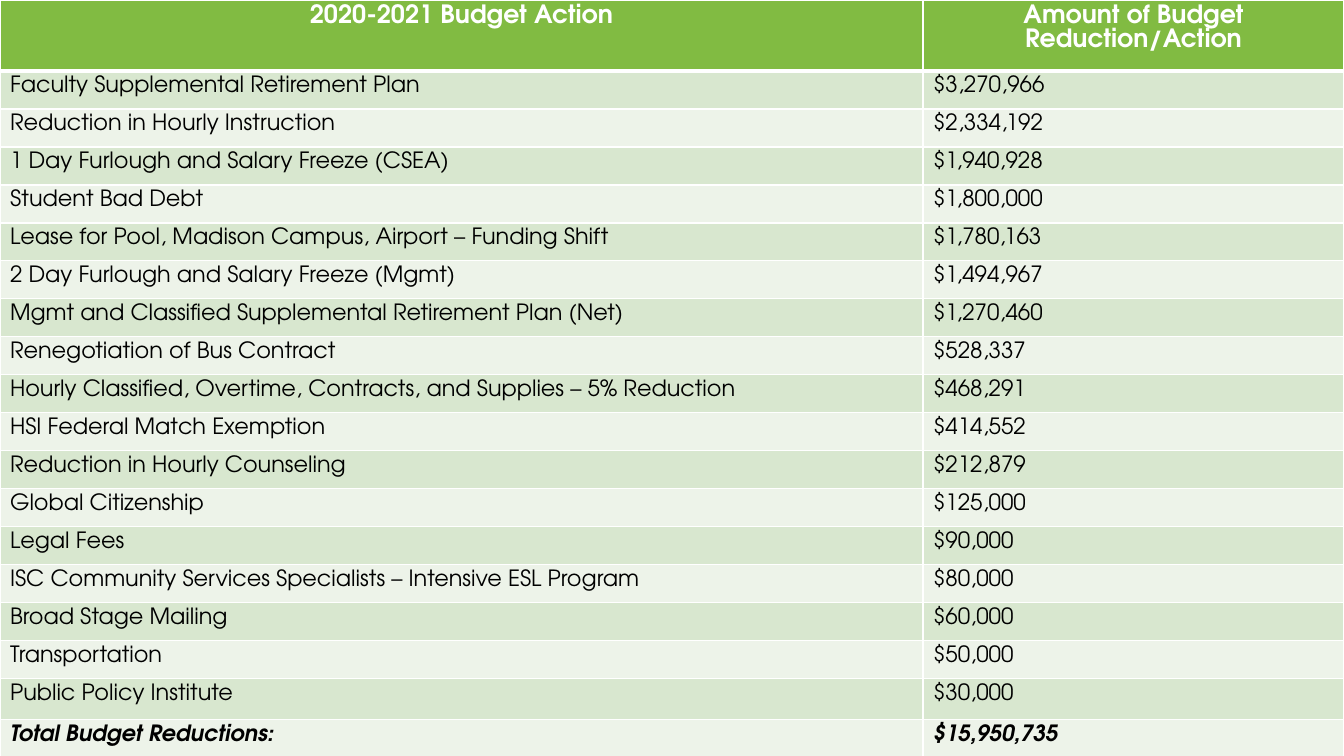
"""Build the 2020-2021 budget action table slide."""
from lxml.etree import SubElement
from pptx import Presentation
from pptx.dml.color import RGBColor
from pptx.enum.text import PP_ALIGN
from pptx.oxml.ns import qn
from pptx.util import Pt

HEADER = ("2020-2021 Budget Action", "Amount of Budget Reduction/Action")
ACTIONS = [
    ("Faculty Supplemental Retirement Plan", "$3,270,966"),
    ("Reduction in Hourly Instruction", "$2,334,192"),
    ("1 Day Furlough and Salary Freeze (CSEA)", "$1,940,928"),
    ("Student Bad Debt", "$1,800,000"),
    ("Lease for Pool, Madison Campus, Airport – Funding Shift", "$1,780,163"),
    ("2 Day Furlough and Salary Freeze (Mgmt)", "$1,494,967"),
    ("Mgmt and Classified Supplemental Retirement Plan (Net)", "$1,270,460"),
    ("Renegotiation of Bus Contract", "$528,337"),
    ("Hourly Classified, Overtime, Contracts, and Supplies – 5% Reduction", "$468,291"),
    ("HSI Federal Match Exemption", "$414,552"),
    ("Reduction in Hourly Counseling", "$212,879"),
    ("Global Citizenship", "$125,000"),
    ("Legal Fees", "$90,000"),
    ("ISC Community Services Specialists – Intensive ESL Program", "$80,000"),
    ("Broad Stage Mailing", "$60,000"),
    ("Transportation", "$50,000"),
    ("Public Policy Institute", "$30,000"),
]
TOTAL = ("Total Budget Reductions:", "$15,950,735")

FONT = "TeX Gyre Adventor"
HEADER_FORMAT = {"name": FONT, "size": Pt(18), "bold": True}
ACTION_FORMAT = {"name": FONT, "size": Pt(16), "bold": False}
TOTAL_FORMAT = {"name": FONT, "size": Pt(16), "bold": True, "italic": True}
HEADER_FILL, BAND_FILLS = "81BB42", ("EDF3E9", "D8E7CF")
BORDER, WHITE, BLACK = "FFFFFF", "FFFFFF", "000000"

SLIDE_WIDTH, SLIDE_HEIGHT = 1344, 756
COLUMN_WIDTHS = (923, 421)
ROW_HEIGHTS = [71] + [38] * (len(ACTIONS) - 1) + [41, 38]


def px(length):
    return round(length * 914400 / 100.8)


def color(value):
    return RGBColor.from_string(value)


def set_borders(cell, bottom_width):
    properties = cell._tc.get_or_add_tcPr()
    widths = {"a:lnL": 1, "a:lnR": 1, "a:lnT": 1, "a:lnB": bottom_width}
    for index, (tag, width) in enumerate(widths.items()):
        line = properties.makeelement(qn(tag), {"w": str(Pt(width))})
        fill = SubElement(line, qn("a:solidFill"))
        SubElement(fill, qn("a:srgbClr"), val=BORDER)
        properties.insert(index, line)


def fill_cell(cell, text, fill, font_color, font_format, alignment, bottom_width):
    cell.fill.solid()
    cell.fill.fore_color.rgb = color(fill)
    set_borders(cell, bottom_width)
    paragraph = cell.text_frame.paragraphs[0]
    paragraph.alignment = alignment
    run = paragraph.add_run()
    run.text = text
    run.font.color.rgb = color(font_color)
    for name, value in font_format.items():
        setattr(run.font, name, value)


def add_budget_table(slide):
    rows = [HEADER, *ACTIONS, TOTAL]
    frame = slide.shapes.add_table(
        len(rows), len(COLUMN_WIDTHS), 0, 0, px(sum(COLUMN_WIDTHS)), px(sum(ROW_HEIGHTS))
    )
    table = frame.table
    for column, width in zip(table.columns, COLUMN_WIDTHS):
        column.width = px(width)
    for index, (row, height) in enumerate(zip(rows, ROW_HEIGHTS)):
        table.rows[index].height = px(height)
        if row is HEADER:
            style = (HEADER_FILL, WHITE, HEADER_FORMAT, PP_ALIGN.CENTER, 3)
        else:
            font_format = TOTAL_FORMAT if row is TOTAL else ACTION_FORMAT
            style = (BAND_FILLS[index % 2], BLACK, font_format, PP_ALIGN.LEFT, 1)
        for cell, text in zip(table.rows[index].cells, row):
            fill_cell(cell, text, *style)


def main():
    presentation = Presentation()
    presentation.slide_width = px(SLIDE_WIDTH)
    presentation.slide_height = px(SLIDE_HEIGHT)
    slide = presentation.slides.add_slide(presentation.slide_layouts[6])
    slide.background.fill.solid()
    slide.background.fill.fore_color.rgb = color(BLACK)
    add_budget_table(slide)
    presentation.save("out.pptx")


if __name__ == "__main__":
    main()
